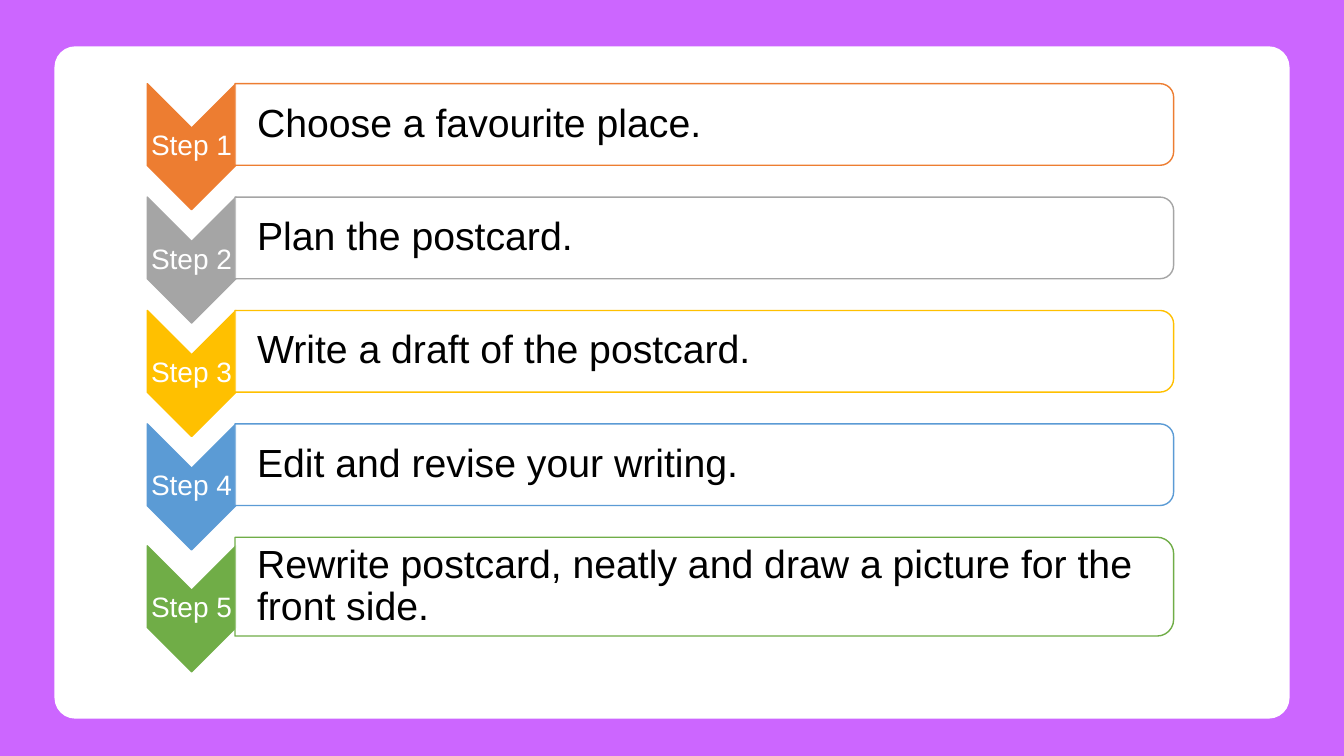
from dataclasses import dataclass

from lxml.etree import SubElement
from pptx import Presentation
from pptx.dml.color import RGBColor
from pptx.enum.shapes import MSO_SHAPE
from pptx.enum.text import MSO_ANCHOR, PP_ALIGN
from pptx.oxml.ns import qn
from pptx.util import Inches, Pt


@dataclass(frozen=True)
class Theme:
    font: str = "Arial"
    background: str = "CC66FF"
    card: str = "FFFFFF"
    label: str = "FFFFFF"
    detail: str = "000000"
    accents: tuple = ("ED7D31", "A5A5A5", "FFC000", "5B9BD5", "70AD47")
    label_size: int = 20
    detail_size: int = 28


theme = Theme()


def add_turned_shape(preset, center_x, center_y, length, breadth, fill, line):
    shape = slide.shapes.add_shape(
        preset,
        Inches(center_x - length / 2),
        Inches(center_y - breadth / 2),
        Inches(length),
        Inches(breadth),
    )
    shape.rotation = 90
    shape.shadow.inherit = False
    shape.fill.solid()
    shape.fill.fore_color.rgb = RGBColor.from_string(fill)
    shape.line.color.rgb = RGBColor.from_string(line)
    shape.line.width = Pt(1)
    return shape


def add_text(text, left, center_y, width, height, inset, size, color, align):
    box = slide.shapes.add_textbox(
        Inches(left), Inches(center_y - height / 2), Inches(width), Inches(height)
    )
    frame = box.text_frame
    frame.word_wrap = True
    frame.vertical_anchor = MSO_ANCHOR.MIDDLE
    frame.margin_left = Inches(inset)
    frame.margin_right = frame.margin_top = frame.margin_bottom = Inches(0.01)
    paragraph = frame.paragraphs[0]
    paragraph.text = text
    paragraph.alignment = align
    paragraph.line_spacing = 0.9
    paragraph.font.name = theme.font
    paragraph.font.size = Pt(size)
    paragraph.font.color.rgb = RGBColor.from_string(color)


presentation = Presentation()
presentation.slide_width = Inches(13.33)
presentation.slide_height = Inches(7.5)
slide = presentation.slides.add_slide(presentation.slide_layouts[6])
slide.background.fill.solid()
slide.background.fill.fore_color.rgb = RGBColor.from_string(theme.background)

card = slide.shapes.add_shape(
    MSO_SHAPE.ROUNDED_RECTANGLE, Inches(0.54), Inches(0.46), Inches(12.25), Inches(6.67)
)
card.adjustments[0] = 0.031
card.shadow.inherit = False
card.fill.solid()
card.fill.fore_color.rgb = RGBColor.from_string(theme.card)
card.line.fill.background()

steps = [
    ("Choose a favourite place.", 0.81),
    ("Plan the postcard.", 0.81),
    ("Write a draft of the postcard.", 0.81),
    ("Edit and revise your writing.", 0.81),
    ("Rewrite postcard, neatly and draw a picture for the front side.", 0.98),
]
first_top, pitch = 0.83, 1.125
chevron_left, chevron_width, chevron_height, chevron_drop = 1.46, 0.88, 1.25, 0.22
panel_left, panel_width = 2.33, 9.31

for index, ((detail, panel_height), accent) in enumerate(zip(steps, theme.accents)):
    panel_y = first_top + index * pitch + panel_height / 2
    chevron_y = panel_y + chevron_drop

    add_turned_shape(
        MSO_SHAPE.CHEVRON, chevron_left + chevron_width / 2, chevron_y,
        chevron_height, chevron_width, accent, accent,
    )
    add_text(
        f"Step {index + 1}", chevron_left, chevron_y, chevron_width, 0.38,
        0.01, theme.label_size, theme.label, PP_ALIGN.CENTER,
    )

    panel = add_turned_shape(
        MSO_SHAPE.ROUND_2_SAME_RECTANGLE, panel_left + panel_width / 2, panel_y,
        panel_height, panel_width, theme.card, accent,
    )
    panel_color = panel.fill._xPr.find(qn("a:solidFill"))[0]
    SubElement(panel_color, qn("a:alpha"), val="90000")
    add_text(
        detail, panel_left, panel_y, 9.27, panel_height - 0.08,
        0.22, theme.detail_size, theme.detail, PP_ALIGN.LEFT,
    )

presentation.save("out.pptx")
